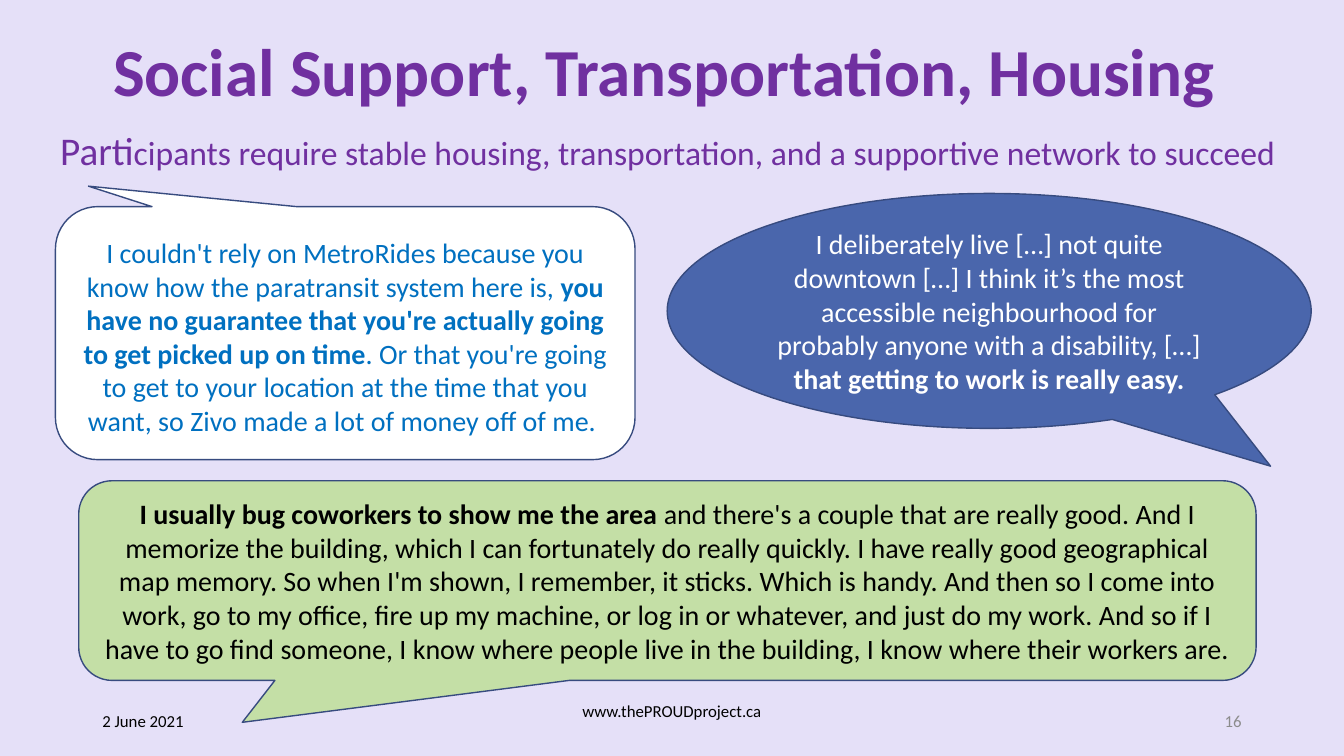
from dataclasses import dataclass

from pptx import Presentation
from pptx.dml.color import RGBColor
from pptx.enum.shapes import MSO_SHAPE
from pptx.enum.text import MSO_ANCHOR, MSO_AUTO_SIZE, PP_ALIGN
from pptx.util import Pt

ROUNDED = MSO_SHAPE.ROUNDED_RECTANGULAR_CALLOUT
OVAL = MSO_SHAPE.OVAL_CALLOUT
TOP, MIDDLE = MSO_ANCHOR.TOP, MSO_ANCHOR.MIDDLE
LEFT, CENTER, RIGHT = PP_ALIGN.LEFT, PP_ALIGN.CENTER, PP_ALIGN.RIGHT


@dataclass(frozen=True)
class Theme:
    font: str = "Calibri"
    lilac: str = "E5E0F8"
    purple: str = "7030A0"
    white: str = "FFFFFF"
    blue: str = "4A66AC"
    bright_blue: str = "0070C0"
    green: str = "C4DFA6"
    outline: str = "374B7F"
    black: str = "000000"
    gray: str = "8C8C8C"
    title: int = 48
    lead: int = 28
    subtitle: int = 24
    quote: int = 20
    footer: int = 12


THEME = Theme()


def rgb(color):
    return RGBColor.from_string(color)


def write(frame, runs, color, align, anchor=MIDDLE, spacing=1.0):
    """Fill a text frame with one paragraph of (text, size, bold) runs."""
    frame.word_wrap = True
    frame.auto_size = MSO_AUTO_SIZE.NONE
    frame.vertical_anchor = anchor
    paragraph = frame.paragraphs[0]
    paragraph.alignment = align
    paragraph.line_spacing = spacing
    for text, size, bold in runs:
        run = paragraph.add_run()
        run.text = text
        run.font.name = THEME.font
        run.font.size = Pt(size)
        run.font.bold = bold
        run.font.color.rgb = rgb(color)


prs = Presentation()
prs.slide_width, prs.slide_height = Pt(960), Pt(540)
slide = prs.slides.add_slide(prs.slide_layouts[5])
slide.background.fill.solid()
slide.background.fill.fore_color.rgb = rgb(THEME.lilac)

# Title and subtitle
title = slide.shapes.title
title.left, title.top, title.width, title.height = Pt(66), Pt(16.5), Pt(828), Pt(73.5)
write(title.text_frame, [("Social Support, Transportation, Housing ", THEME.title, True)],
      THEME.purple, CENTER, spacing=0.9)

subtitle = slide.shapes.add_textbox(Pt(21.6), Pt(90.7), Pt(910.8), Pt(39.6))
write(subtitle.text_frame,
      [("Parti", THEME.lead, False),
       ("cipants require stable housing, transportation, and a supportive network to succeed",
        THEME.subtitle, False)],
      THEME.purple, CENTER, TOP, 0.9)

# Participant quotes: outline, box, adjustments, fill, text colour, top inset, (text, bold)
quotes = [
    (ROUNDED, (39.6, 147.6, 414, 180.7), (-0.443, -0.581, 0.167),
     THEME.white, THEME.bright_blue, 8,
     [("I couldn't rely on MetroRides because you know how the paratransit system here is, ",
       False),
      ("you have no guarantee that you're actually going to get picked up on time", True),
      (". Or that you're going to get to your location at the time that you want, "
       "so Zivo made a lot of money off of me. ", False)]),
    (OVAL, (476.6, 138.2, 460, 167.8), (0.437, 0.661),
     THEME.blue, THEME.white, 3.6,
     [("I deliberately live […] not quite downtown […] I think it’s the most accessible "
       "neighbourhood for probably anyone with a disability, […] ", False),
      ("that getting to work is really easy.", True)]),
    (ROUNDED, (56.2, 343.4, 841, 142.6), (-0.361, 0.71, 0.167),
     THEME.green, THEME.black, 3.6,
     [("I usually bug coworkers to show me the area ", True),
      ("and there's a couple that are really good. And I memorize the building, which I can "
       "fortunately do really quickly. I have really good geographical map memory. So when "
       "I'm shown, I remember, it sticks. Which is handy. And then so I come into work, go "
       "to my office, fire up my machine, or log in or whatever, and just do my work. And so "
       "if I have to go find someone, I know where people live in the building, I know where "
       "their workers are.", False)]),
]
for outline, box, adjustments, fill, color, inset, parts in quotes:
    bubble = slide.shapes.add_shape(outline, *map(Pt, box))
    for index, value in enumerate(adjustments):
        bubble.adjustments[index] = value
    bubble.shadow.inherit = False
    bubble.fill.solid()
    bubble.fill.fore_color.rgb = rgb(fill)
    bubble.line.color.rgb = rgb(THEME.outline)
    bubble.line.width = Pt(1)
    bubble.text_frame.margin_top = Pt(inset)
    write(bubble.text_frame, [(text, THEME.quote, bold) for text, bold in parts],
          color, CENTER)

# Footer: date, web address (set slightly higher), slide number
footers = [
    ("2 June 2021", 66, 216, THEME.black, LEFT, 3.6),
    ("www.thePROUDproject.ca", 318, 324, THEME.black, CENTER, 18),
    ("16", 678, 216, THEME.gray, RIGHT, 3.6),
]
for text, left, width, color, align, bottom_inset in footers:
    footer = slide.shapes.add_textbox(Pt(left), Pt(500.4), Pt(width), Pt(28.8))
    footer.text_frame.margin_bottom = Pt(bottom_inset)
    write(footer.text_frame, [(text, THEME.footer, False)], color, align)

prs.save("out.pptx")
